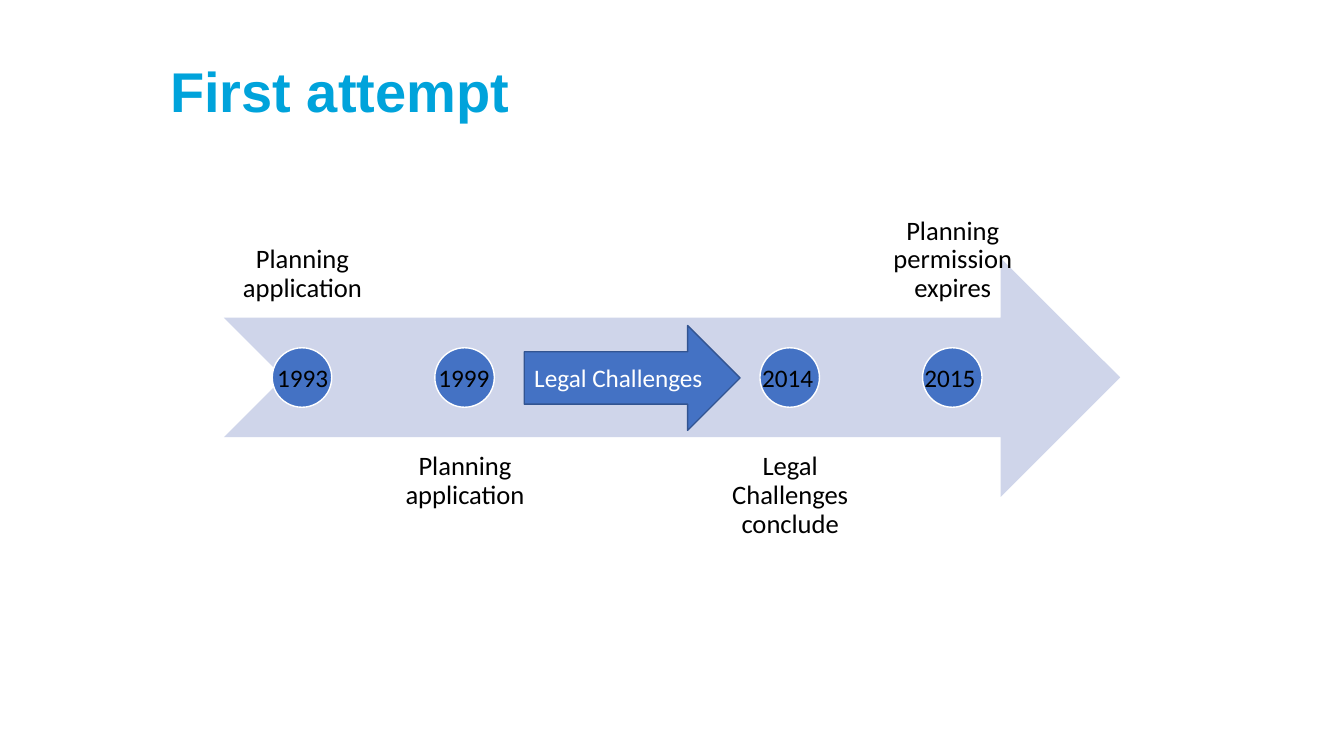
from pptx import Presentation
from pptx.dml.color import RGBColor
from pptx.enum.shapes import MSO_SHAPE
from pptx.enum.text import MSO_ANCHOR, PP_ALIGN
from pptx.util import Inches, Pt

BAND, ARROW, OVAL = (MSO_SHAPE.NOTCHED_RIGHT_ARROW, MSO_SHAPE.RIGHT_ARROW,
                     MSO_SHAPE.OVAL)
TOP, BOTTOM = MSO_ANCHOR.TOP, MSO_ANCHOR.BOTTOM
LEFT, CENTER = PP_ALIGN.LEFT, PP_ALIGN.CENTER

COLORS = {"title": "00A3DB", "band": "CFD5EA", "blue": "4472C4",
          "edge": "325491", "black": "000000", "white": "FFFFFF"}

# Timeline: slot, year, left of year, label, label above the band
STOPS = [
    (0, "1993", 2.65, "Planning application", True),
    (1, "1999", 4.25, "Planning application", False),
    (3, "2014", 7.46, "Legal Challenges conclude", False),
    (4, "2015", 9.07, "Planning permission expires", True),
]
START, END, SLOTS = 2.7, 9.15, 4
STEP = (END - START) / SLOTS
YEAR_TOP = 3.55


def color(name):
    return RGBColor.from_string(COLORS[name])


def write(frame, text, size=18, font="Calibri", ink="black", bold=False,
          align=LEFT, spacing=1.0):
    par = frame.paragraphs[0]
    par.alignment = align
    par.line_spacing = spacing
    run = par.add_run()
    run.text = text
    run.font.size = Pt(size)
    run.font.name = font
    run.font.bold = bold
    run.font.color.rgb = color(ink)


class Board:
    def __init__(self, slide):
        self.slide = slide

    def shape(self, kind, box, fill, edge=None):
        item = self.slide.shapes.add_shape(kind, *map(Inches, box))
        item.shadow.inherit = False
        item.fill.solid()
        item.fill.fore_color.rgb = color(fill)
        if edge:
            item.line.color.rgb = color(edge)
            item.line.width = Pt(1)
        else:
            item.line.fill.background()

    def text(self, box, text, anchor=TOP, inset=None, **style):
        frame = self.slide.shapes.add_textbox(*map(Inches, box)).text_frame
        frame.word_wrap = True
        frame.vertical_anchor = anchor
        if inset is not None:
            frame.margin_left = frame.margin_right = Inches(inset)
            frame.margin_top = frame.margin_bottom = Inches(inset)
        write(frame, text, **style)


def main():
    deck = Presentation()
    deck.slide_width, deck.slide_height = Inches(13.33), Inches(7.5)
    board = Board(deck.slides.add_slide(deck.slide_layouts[6]))

    # Title
    board.text((1.59, 0.59, 5.33, 1.13), "First attempt", size=40,
               font="Arial", ink="title", bold=True, spacing=0.9)

    # Timeline band
    board.shape(BAND, (2.22, 2.56, 8.89, 2.37), "band")

    # Dots, labels and years
    for slot, year, left, label, above in STOPS:
        dot = START + slot * STEP
        board.shape(OVAL, (dot, 3.45, 0.59, 0.59), "blue", "white")
        board.text((dot - 0.47, 0.79 if above else 4.34, 1.54, 2.37), label,
                   anchor=BOTTOM if above else TOP, inset=0.15, size=19,
                   align=CENTER, spacing=0.9)
        board.text((left, YEAR_TOP, 0.8, 0.4), year)

    # Legal challenges arrow
    board.shape(ARROW, (5.2, 3.23, 2.14, 1.04), "blue", "edge")
    board.text((5.2, YEAR_TOP, 2.08, 0.4), "Legal Challenges", ink="white")

    deck.save("out.pptx")


if __name__ == "__main__":
    main()
